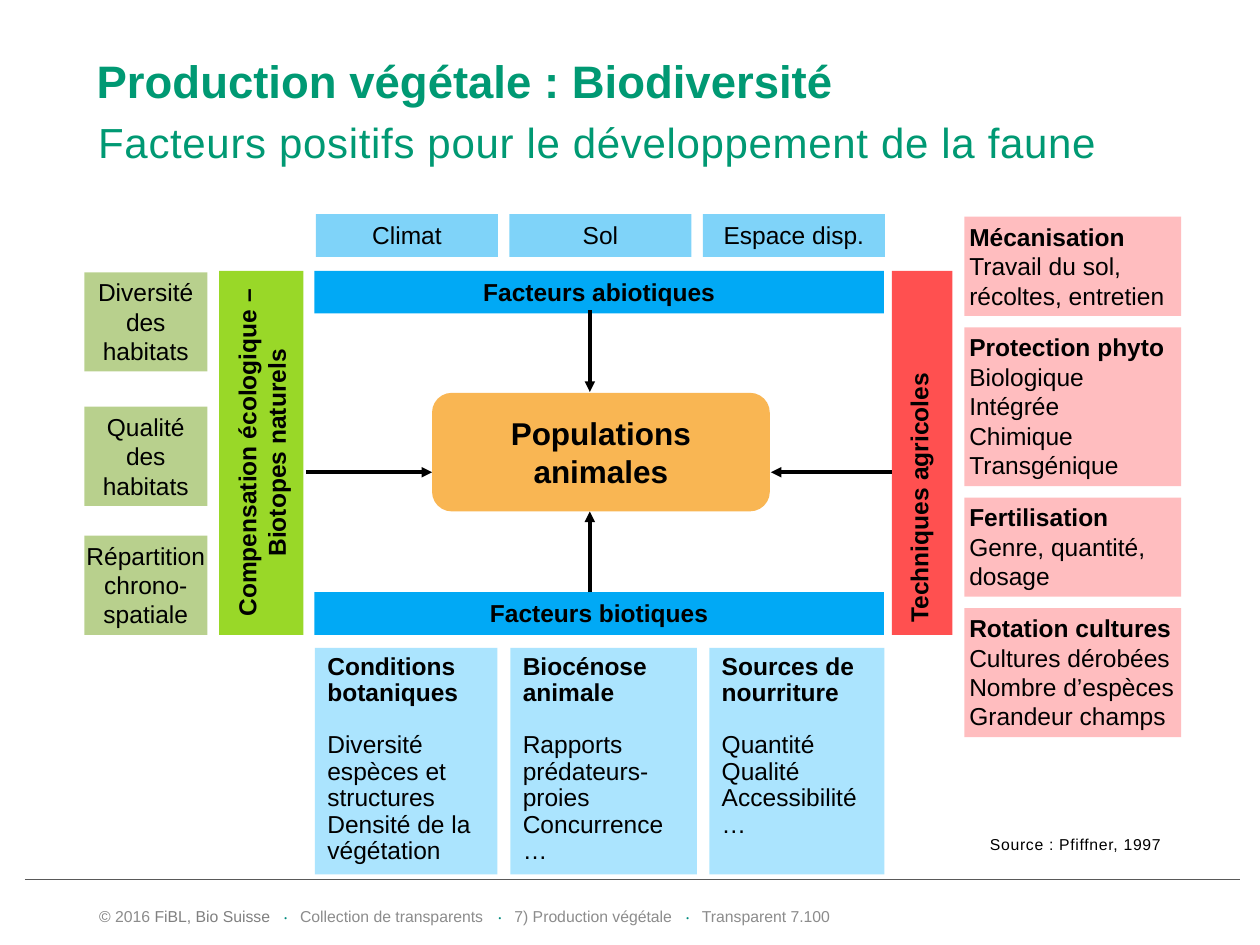
from lxml import etree
from pptx import Presentation
from pptx import util as u
from pptx.dml.color import RGBColor
from pptx.enum import shapes, text
from pptx.oxml.ns import qn

COLOURS = {
    "title": "009973", "black": "000000", "rule": "595959",
    "footer": "808080", "footer light": "8C8C8C", "dot": "008C7F",
    "abiotic": "01A9F5", "biotic": "58CBFE", "habitat": "73A31D",
    "ecology": "99D828", "technique": "FF7C80", "techniques": "FF5050",
    "animals": "F9B653",
}
LEFT, CENTER, RIGHT = text.PP_ALIGN.LEFT, text.PP_ALIGN.CENTER, text.PP_ALIGN.RIGHT
TOP, MIDDLE = text.MSO_ANCHOR.TOP, text.MSO_ANCHOR.MIDDLE
RECT, ROUNDED = shapes.MSO_SHAPE.RECTANGLE, shapes.MSO_SHAPE.ROUNDED_RECTANGLE


class Sheet:
    """Holds the style and the current page; all lengths are centimetres."""

    def __init__(self, page, font="Arial", size=14):
        self.page, self.font, self.size = page, font, size

    def style(self, span, colour="black", size=None, bold=False, font=None, spacing=0):
        span.font.name = font or self.font
        span.font.size = u.Pt(size or self.size)
        span.font.bold = bold
        span.font.color.rgb = RGBColor.from_string(COLOURS[colour])
        if spacing:
            span._r.get_or_add_rPr().set("spc", str(round(spacing * 100)))

    def fill_text(self, box, lines, align=LEFT, anchor=TOP, leading=None, heads=0,
                  head_gap=0, insets=None, **look):
        """Fill a box; the first `heads` paragraphs are bold."""
        frame = box.text_frame
        frame.word_wrap = True
        frame.vertical_anchor = anchor
        if insets:
            frame.margin_left = frame.margin_right = u.Cm(insets[0])
            frame.margin_top = frame.margin_bottom = u.Cm(insets[1])
        frame.text = "\n".join(lines)
        for index, para in enumerate(frame.paragraphs):
            para.alignment = align
            if leading:
                para.line_spacing = leading
            if head_gap and index < heads:
                para.space_after = u.Pt(head_gap)
            for span in para.runs:
                self.style(span, bold=index < heads, **look)

    def label(self, place, lines, **options):
        box = self.page.shapes.add_textbox(*map(u.Cm, place))
        self.fill_text(box, lines, **options)
        return box

    def block(self, place, fill, lines, shape=RECT, alpha=None, upward=False, **options):
        box = self.page.shapes.add_shape(shape, *map(u.Cm, place))
        box.shadow.inherit = False
        box.fill.solid()
        box.fill.fore_color.rgb = RGBColor.from_string(COLOURS[fill])
        box.line.fill.background()
        if alpha:
            colour = box._element.spPr.find(qn("a:solidFill"))[0]
            etree.SubElement(colour, qn("a:alpha")).set("val", str(alpha * 1000))
        self.fill_text(box, lines, **options)
        if upward:
            box.text_frame._txBody.bodyPr.set("vert", "vert270")

    def line(self, start, end, colour="black", width=2, arrow=True):
        rule = self.page.shapes.add_connector(
            shapes.MSO_CONNECTOR.STRAIGHT, *map(u.Cm, start + end))
        rule.line.width = u.Pt(width)
        rule.line.color.rgb = RGBColor.from_string(COLOURS[colour])
        properties = rule._element.spPr
        if arrow:
            outline = properties.find(qn("a:ln"))
            etree.SubElement(outline, qn("a:tailEnd")).set("type", "triangle")
        etree.SubElement(properties, qn("a:effectLst"))

    def footer(self, place, parts, stops):
        """One line of (text, colour) parts set on tab stops, with dots between."""
        para = self.label(place, [""], anchor=MIDDLE).text_frame.paragraphs[0]
        tabs = etree.SubElement(para._p.get_or_add_pPr(), qn("a:tabLst"))
        for stop in stops:
            etree.SubElement(tabs, qn("a:tab"), pos=str(u.Cm(stop)), algn="l")
        for words, colour in parts:
            span = para.add_run()
            span.text = words
            if colour == "dot":
                self.style(span, colour, 8, font="Montserrat")
            else:
                self.style(span, colour, 9)


def main():
    deck = Presentation()
    deck.slide_width, deck.slide_height = u.Cm(25.4), u.Cm(19.05)
    sheet = Sheet(deck.slides.add_slide(deck.slide_layouts[6]))

    # Headings, source and footer
    sheet.line((0.5, 17.73), (25, 17.73), "rule", 0.5, arrow=False)
    sheet.label((1.7, 1.02, 21.95, 1.32), ["Production végétale : Biodiversité"],
                anchor=MIDDLE, leading=0.9, heads=1, colour="title", size=26)
    sheet.label((1.73, 2.34, 21.92, 1.24),
                ["Facteurs positifs pour le développement de la faune"],
                leading=0.9, colour="title", size=24, spacing=0.4)
    sheet.label((1.75, 16.71, 21.9, 0.79), ["Source : Pfiffner, 1997"],
                align=RIGHT, size=9, spacing=0.4)
    dot = ("\t•\t", "dot")
    sheet.footer((1.75, 17.88, 17.55, 1.17), [
        ("© ", "footer"), ("2016 ", "footer light"), ("FiBL, Bio Suisse", "footer"), dot,
        ("Collection de transparents", "footer light"), dot,
        ("7) Production végétale", "footer light"), dot,
        ("Transparent 7.100", "footer light"),
    ], [3.72, 4.05, 8.04, 8.37, 11.82, 12.15])

    # Habitat boxes on the left
    habitats = [
        (5.49, 0.1, ["Diversité des habitats"]),
        (8.2, 0.1, ["Qualité des habitats"]),
        (10.8, 0, ["Répartition", "chrono-spatiale"]),
    ]
    for top, side, lines in habitats:
        sheet.block((1.7, top, 2.48, 2), "habitat", lines, alpha=50,
                    align=CENTER, insets=(side, 0.1))

    # Abiotic factors
    for column, name in enumerate(["Climat", "Sol", "Espace disp."]):
        sheet.block((6.37 + 3.9 * column, 4.32, 3.67, 0.86), "abiotic", [name],
                    alpha=50, align=CENTER)

    # Bars around the centre
    for top, name in [(5.46, "Facteurs abiotiques"), (11.94, "Facteurs biotiques")]:
        sheet.block((6.34, top, 11.48, 0.86), "abiotic", [name], align=CENTER, heads=1)
    sheet.block((4.42, 5.46, 1.7, 7.34), "ecology",
                ["Compensation écologique – Biotopes naturels"],
                upward=True, align=CENTER, anchor=MIDDLE, heads=1)
    sheet.block((17.98, 5.46, 1.22, 7.34), "techniques", ["Techniques agricoles"],
                upward=True, leading=1.2, heads=1)

    # Biotic factors
    biotic = [
        (6.35, 3.68, ["Conditions botaniques", "Diversité espèces et structures",
                      "Densité de la végétation"]),
        (10.29, 3.76, ["Biocénose animale", "Rapports prédateurs-proies",
                       "Concurrence", "…"]),
        (14.3, 3.53, ["Sources de nourriture", "Quantité", "Qualité",
                      "Accessibilité", "…"]),
    ]
    for left, width, lines in biotic:
        sheet.block((left, 13.06, width, 4.57), "biotic", lines, alpha=50,
                    leading=0.9, heads=1, head_gap=14.5)

    # Farming techniques, stacked with equal gaps
    techniques = [
        (2, ["Mécanisation", "Travail du sol, récoltes, entretien"]),
        (3.2, ["Protection phyto", "Biologique", "Intégrée", "Chimique", "Transgénique"]),
        (2, ["Fertilisation", "Genre, quantité, dosage"]),
        (2.6, ["Rotation cultures", "Cultures dérobées", "Nombre d’espèces",
               "Grandeur champs"]),
    ]
    top = 4.37
    for height, lines in techniques:
        sheet.block((19.44, top, 4.37, height), "technique", lines, alpha=50,
                    heads=1, insets=(0.1, 0.1))
        top += height + 0.23

    # Arrows towards the animal populations
    for start, end in [((11.89, 6.25), (11.89, 7.9)), ((11.89, 11.94), (11.89, 10.31)),
                       ((6.17, 9.52), (8.71, 9.52)), ((17.98, 9.52), (15.54, 9.52))]:
        sheet.line(start, end)
    sheet.block((8.71, 7.92, 6.81, 2.39), "animals", ["Populations animales"],
                shape=ROUNDED, align=CENTER, anchor=MIDDLE, heads=1, size=18)

    deck.save("out.pptx")


if __name__ == "__main__":
    main()
